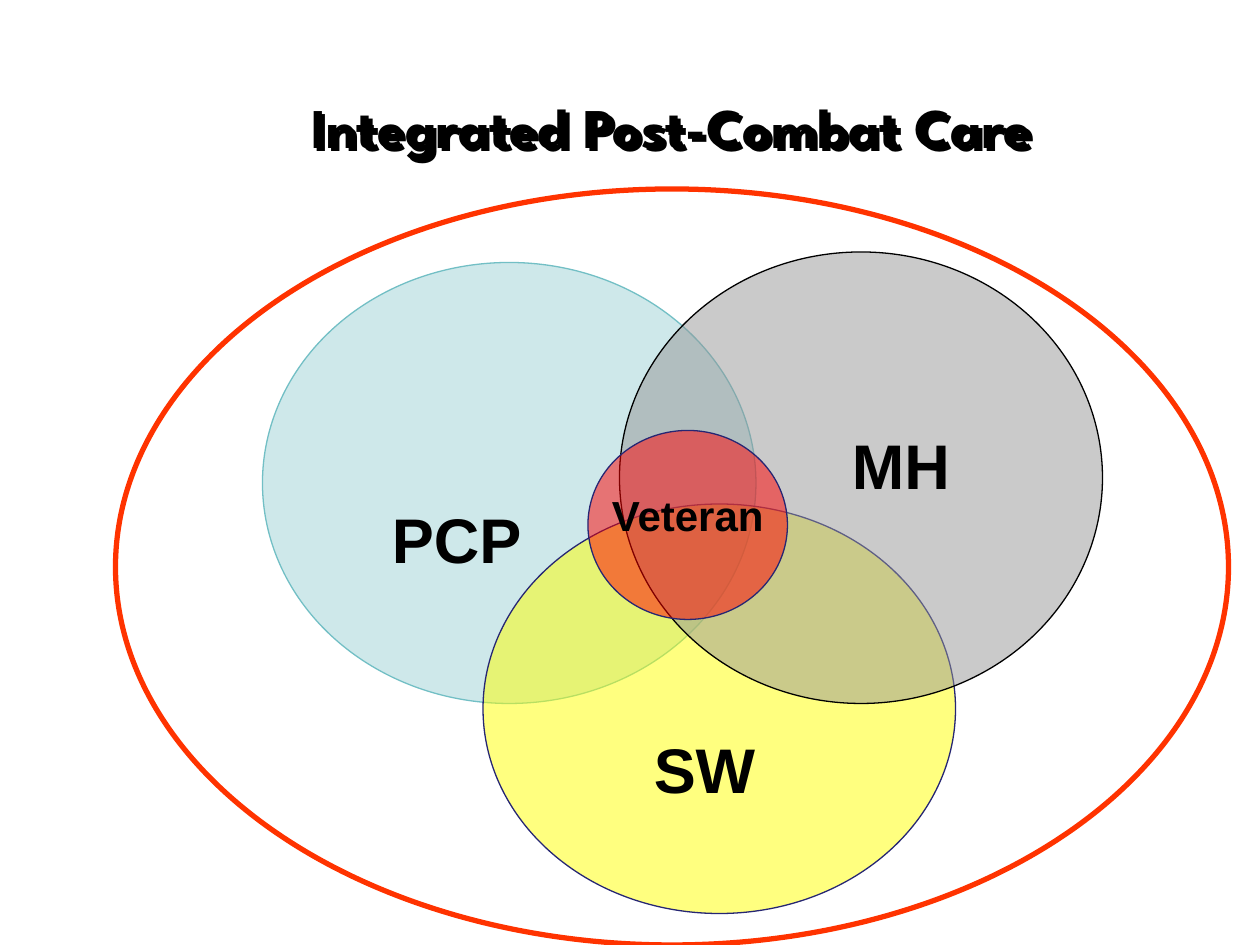
from dataclasses import dataclass

from lxml import etree
from pptx import Presentation
from pptx.dml.color import RGBColor
from pptx.enum.shapes import MSO_SHAPE
from pptx.enum.text import MSO_ANCHOR, PP_ALIGN
from pptx.oxml.ns import qn
from pptx.util import Emu, Pt

OVAL = MSO_SHAPE.OVAL
MIDDLE = MSO_ANCHOR.MIDDLE
CENTER = PP_ALIGN.CENTER
PX = 7620  # 120 px to the inch


@dataclass(frozen=True)
class Theme:
    ink: str = "000000"
    ring: str = "FF3300"
    navy: str = "262673"
    teal: str = "9ED3D7"
    edge: str = "72BFC5"
    yellow: str = "FFFF00"
    gray: str = "969696"
    red: str = "FF0000"
    head: str = "League Spartan"
    body: str = "Arial"
    title: int = 32
    label: int = 36
    core: int = 24
    thin: float = 0.75
    thick: float = 3


THEME = Theme()


def emu(box):
    return [Emu(n * PX) for n in box]


def color(code):
    return RGBColor.from_string(code)


def style(frame, text, font, size):
    frame.text = text
    para = frame.paragraphs[0]
    para.alignment = CENTER
    run = para.runs[0]
    run.font.name = font
    run.font.size = Pt(size)
    run.font.bold = True
    run.font.color.rgb = color(THEME.ink)


def add_title(slide, box, text):
    title = slide.shapes.title
    title.left, title.top, title.width, title.height = emu(box)
    frame = title.text_frame
    frame.vertical_anchor = MIDDLE
    style(frame, text, THEME.head, THEME.title)
    cast_shadow(title)


def cast_shadow(shape):
    """Give the letters of an unfilled shape a hard shadow to the lower right."""
    shape.fill.background()
    shape.shadow.inherit = False
    effects = shape._element.spPr.find(qn("a:effectLst"))
    shadow = etree.SubElement(effects, qn("a:outerShdw"),
                              dist="35921", dir="2700000")
    etree.SubElement(shadow, qn("a:srgbClr"), val=THEME.ink)


def add_oval(slide, box, line, width, fill=None):
    """Add an ellipse, half transparent if it has a fill."""
    oval = slide.shapes.add_shape(OVAL, *emu(box))
    oval.shadow.inherit = False
    oval.line.color.rgb = color(line)
    oval.line.width = Pt(width)
    if fill is None:
        oval.fill.background()
        return
    oval.fill.solid()
    oval.fill.fore_color.rgb = color(fill)
    tint = oval._element.spPr.find(qn("a:solidFill"))[0]
    etree.SubElement(tint, qn("a:alpha"), val="50000")


def add_label(slide, box, text, size):
    frame = slide.shapes.add_textbox(*emu(box)).text_frame
    frame.word_wrap = False
    style(frame, text, THEME.body, size)


def add_venn(slide, box):
    """Draw the three care circles and the veteran core inside the ring."""
    left, top, width, height = box

    def place(x, y, w, h):
        return left + x, top + y, w, h

    t = THEME
    add_oval(slide, place(140, 70, 470, 420), t.edge, t.thin, t.teal)
    add_label(slide, place(250, 291, 150, 85), "PCP", t.label)
    add_oval(slide, place(350, 300, 450, 390), t.navy, t.thin, t.yellow)
    add_oval(slide, place(480, 60, 460, 430), t.ink, t.thin, t.gray)
    add_label(slide, place(500, 510, 122, 85), "SW", t.label)
    add_label(slide, place(673, 220, 150, 85), "MH", t.label)
    add_oval(slide, place(0, 0, width, height), t.ring, t.thick)
    add_oval(slide, place(450, 230, 190, 180), t.navy, t.thin, t.red)
    add_label(slide, place(460, 280, 170, 60), "Veteran", t.core)


def main():
    deck = Presentation()
    deck.slide_width, deck.slide_height = emu((1200, 900))
    slide = deck.slides.add_slide(deck.slide_layouts[5])
    add_title(slide, (80, 70, 1120, 100), "Integrated Post-Combat Care")
    add_venn(slide, (110, 180, 1060, 720))
    deck.save("out.pptx")


if __name__ == "__main__":
    main()
